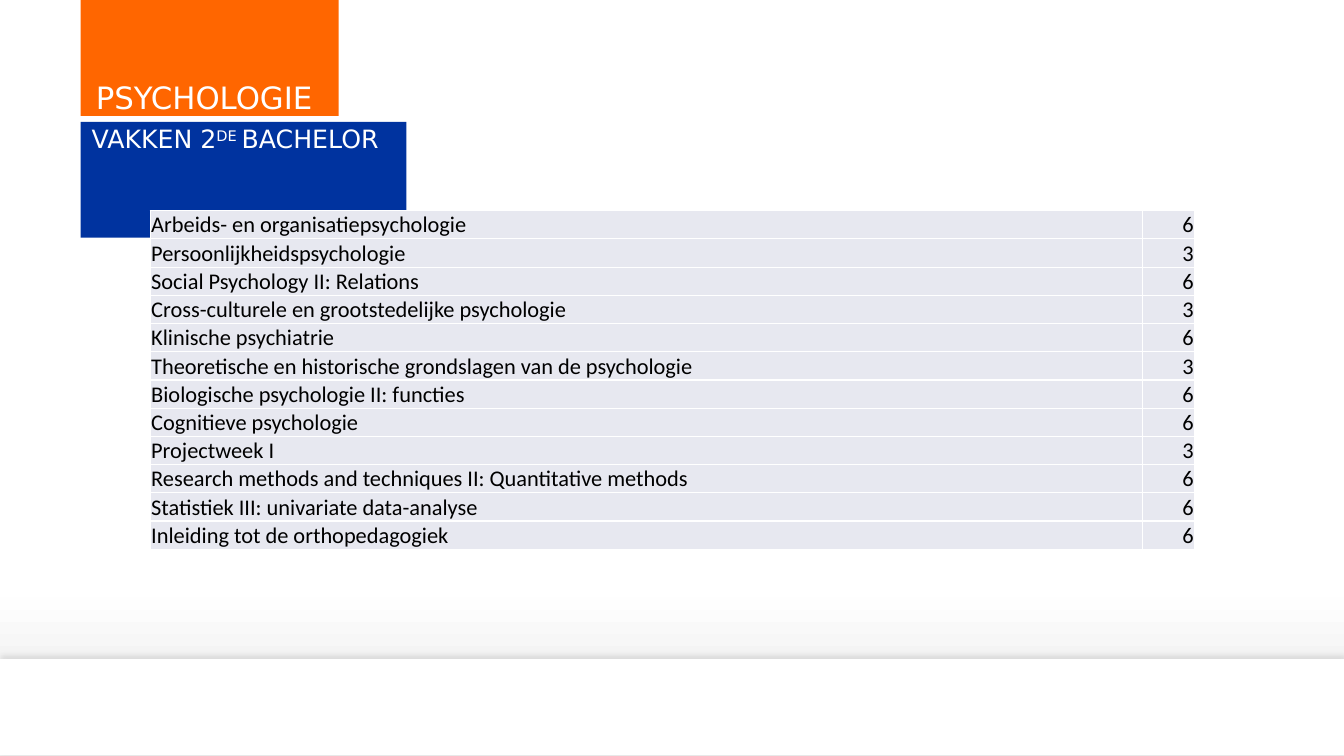
from lxml.etree import fromstring
from pptx import Presentation
from pptx.dml.color import RGBColor
from pptx.enum.shapes import MSO_SHAPE
from pptx.enum.text import MSO_ANCHOR, MSO_AUTO_SIZE, PP_ALIGN
from pptx.oxml.ns import nsdecls, qn
from pptx.util import Inches, Pt

COLORS = {
    "white": "FFFFFF", "pale": "FEFEFE", "grey": "EDEDED", "black": "000000",
    "blue": "00339F", "orange": "FF6600", "cell": "E7E8F0",
}
HEAD_FONT = "DejaVu Sans"
BODY_FONT = "Calibri"
COURSES = [
    ("Arbeids- en organisatiepsychologie", 6),
    ("Persoonlijkheidspsychologie", 3),
    ("Social Psychology II: Relations", 6),
    ("Cross-culturele en grootstedelijke psychologie", 3),
    ("Klinische psychiatrie", 6),
    ("Theoretische en historische grondslagen van de psychologie", 3),
    ("Biologische psychologie II: functies", 6),
    ("Cognitieve psychologie", 6),
    ("Projectweek I", 3),
    ("Research methods and techniques II: Quantitative methods", 6),
    ("Statistiek III: univariate data-analyse", 6),
    ("Inleiding tot de orthopedagogiek", 6),
]


def rgb(name):
    return RGBColor.from_string(COLORS[name])


def paint(item, name):
    item.fill.solid()
    item.fill.fore_color.rgb = rgb(name)


def inset(item, left, top, right, bottom):
    item.margin_left, item.margin_top = Inches(left), Inches(top)
    item.margin_right, item.margin_bottom = Inches(right), Inches(bottom)


def write(frame, text, size, font, color, align=PP_ALIGN.LEFT,
          indent=0, line=None, raised=()):
    """Fill a frame with one paragraph; text is a string or a list of runs."""
    para = frame.paragraphs[0]
    para.alignment = align
    para.line_spacing = line
    para.space_before = Pt(0)
    props = para._p.get_or_add_pPr()
    props.set("marL", str(Inches(indent)))
    props.set("indent", "0")
    for part in [text] if isinstance(text, str) else text:
        run = para.add_run()
        run.text = part
        run.font.size, run.font.name = Pt(size), font
        run.font.color.rgb = rgb(color)
        if part in raised:
            run._r.get_or_add_rPr().set("baseline", "30000")


# Background: white that fades to grey
def add_back(slide):
    fill = slide.background.fill
    fill.gradient()
    fill.gradient_angle = 270
    stops = slide._element.find(".//" + qn("a:gsLst"))
    for stop in list(stops):
        stops.remove(stop)
    for pos, name in ((0, "white"), (79, "pale"), (92, "grey")):
        stops.append(fromstring(
            f'<a:gs {nsdecls("a")} pos="{pos * 1000}">'
            f'<a:srgbClr val="{COLORS[name]}"/></a:gs>'))


# Footer band with a soft shadow above it
def add_band(slide, box):
    band = slide.shapes.add_shape(MSO_SHAPE.RECTANGLE, *map(Inches, box))
    paint(band, "white")
    band.line.fill.background()
    band.shadow.inherit = False
    effects = band._element.spPr.find(qn("a:effectLst"))
    effects.append(fromstring(
        f'<a:outerShdw {nsdecls("a")} blurRad="{Pt(4)}" dist="{Pt(3)}" '
        f'dir="16200000" algn="b" rotWithShape="0">'
        f'<a:srgbClr val="{COLORS["black"]}"><a:alpha val="10000"/>'
        f'</a:srgbClr></a:outerShdw>'))


# Coloured heading label
def add_label(shape, box, color, text, margins, anchor, **style):
    shape.left, shape.top, shape.width, shape.height = map(Inches, box)
    paint(shape, color)
    frame = shape.text_frame
    frame.word_wrap = False
    frame.auto_size = MSO_AUTO_SIZE.SHAPE_TO_FIT_TEXT
    frame.vertical_anchor = anchor
    inset(frame, *margins)
    write(frame, text, font=HEAD_FONT, color="white", **style)


def edge(cell):
    props = cell._tc.get_or_add_tcPr()
    for spot, side in enumerate(("lnL", "lnR", "lnT", "lnB")):
        props.insert(spot, fromstring(
            f'<a:{side} {nsdecls("a")} w="{Pt(1)}"><a:solidFill>'
            f'<a:srgbClr val="{COLORS["white"]}"/></a:solidFill></a:{side}>'))


# Course table: name and credits
def add_courses(slide, box, credit):
    left, top, width, height = box
    table = slide.shapes.add_table(
        len(COURSES), 2, *map(Inches, box)).table
    table.first_row = table.horz_banding = False
    table.columns[0].width = Inches(width - credit)
    table.columns[1].width = Inches(credit)
    aligns = (PP_ALIGN.LEFT, PP_ALIGN.RIGHT)
    for row, course in zip(table.rows, COURSES):
        row.height = Inches(height / len(COURSES))
        for cell, value, align in zip(row.cells, course, aligns):
            paint(cell, "cell")
            edge(cell)
            inset(cell, 0.01, 0.01, 0.01, 0)
            cell.vertical_anchor = MSO_ANCHOR.BOTTOM
            write(cell.text_frame, str(value), 16, BODY_FONT, "black",
                  align=align)


def main():
    deck = Presentation()
    deck.slide_width, deck.slide_height = Inches(13.33), Inches(7.5)
    slide = deck.slides.add_slide(deck.slide_layouts[0])
    add_back(slide)
    add_band(slide, (0, 6.54, 13.33, 0.95))
    add_label(slide.shapes.title, (0.8, 0.78, 2.56, 0.37), "orange",
              "PSYCHOLOGIE", (0, 0.04, 0.16, 0), MSO_ANCHOR.BOTTOM,
              size=22, indent=0.15, line=0.9)
    add_label(slide.placeholders[1], (0.8, 1.21, 3.23, 0.37), "blue",
              ["VAKKEN 2", "DE ", "BACHELOR"], (0, 0.04, 0.1, 0.04),
              MSO_ANCHOR.TOP, size=18, indent=0.11, line=0.95,
              raised=("DE ",))
    add_courses(slide, (1.49, 2.09, 10.36, 3.36), credit=0.52)
    deck.save("out.pptx")


if __name__ == "__main__":
    main()
